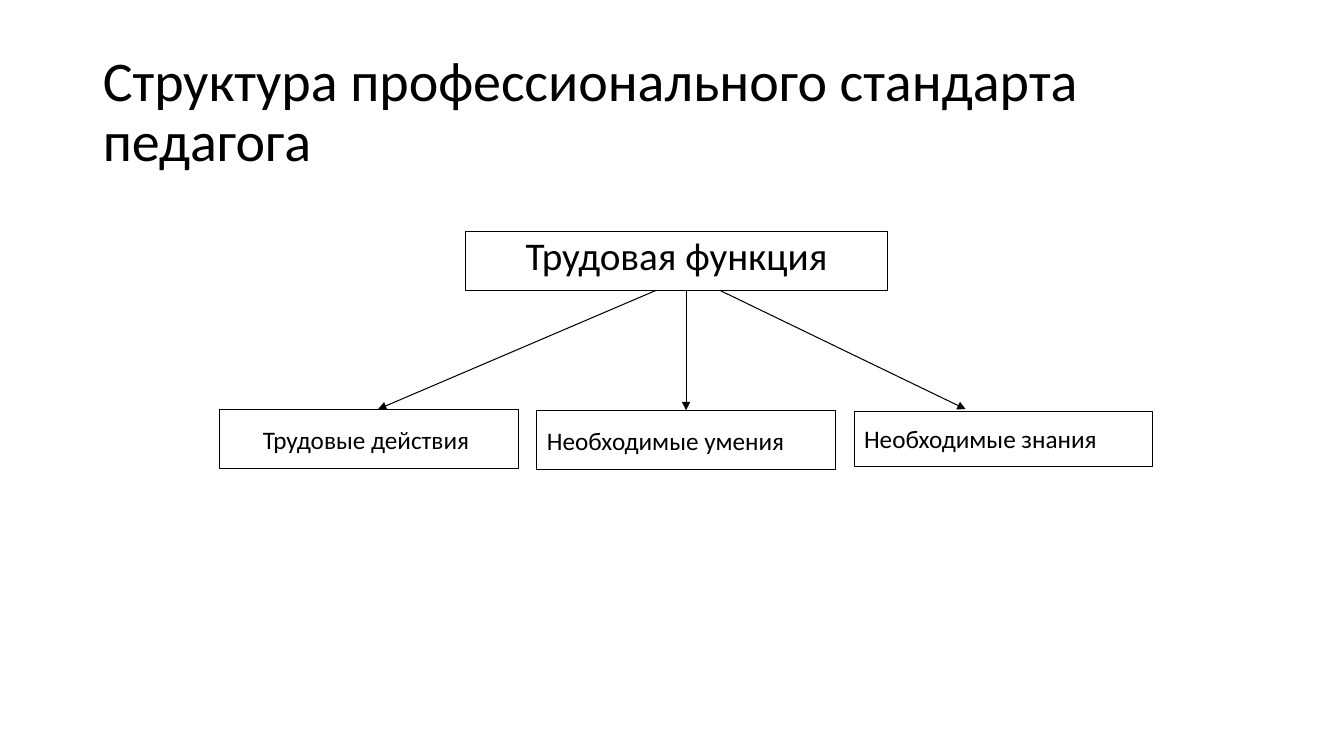
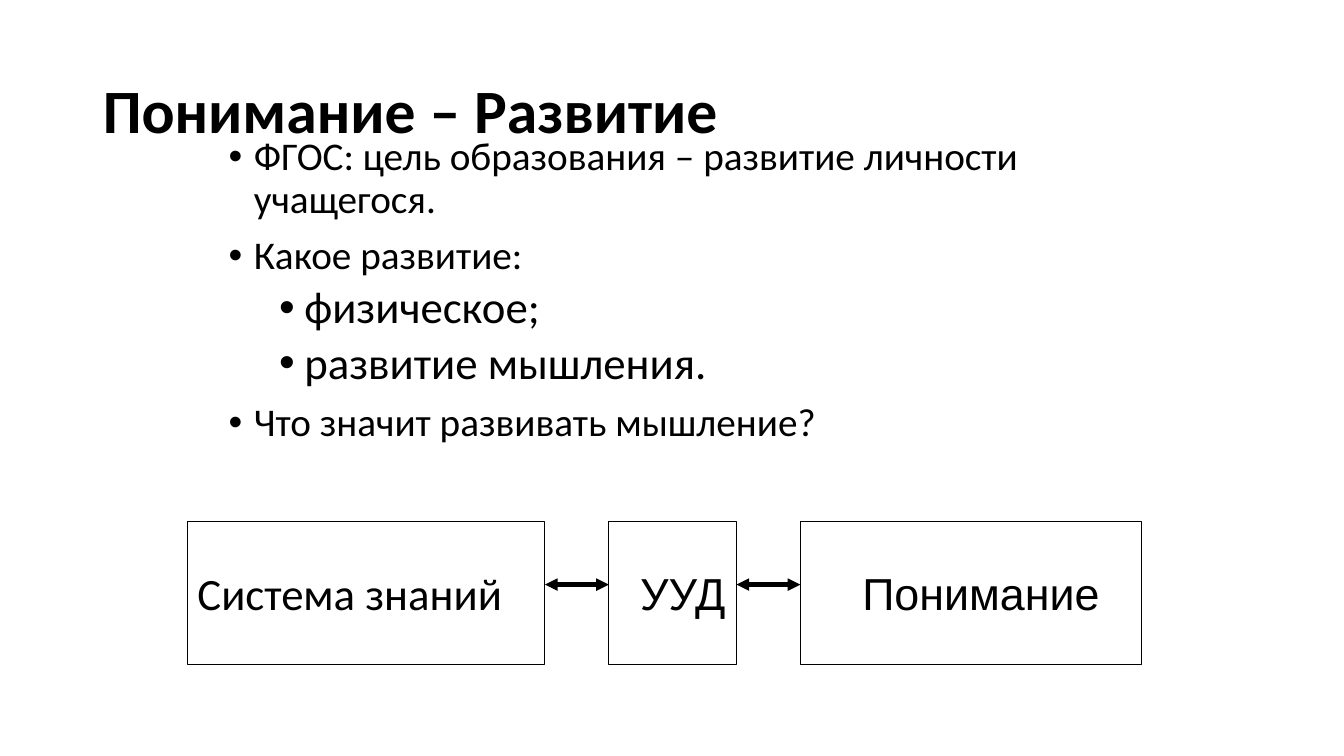
from typing import NamedTuple

import lxml.etree
import pptx
import pptx.dml.color
import pptx.enum.shapes
import pptx.enum.text
import pptx.oxml.ns
import pptx.util

BLACK = pptx.dml.color.RGBColor(0, 0, 0)
WHITE = pptx.dml.color.RGBColor(255, 255, 255)
SANS = "Calibri"
PLAIN = "Arial"
WIDE = pptx.util.Inches(13.33)
HIGH = pptx.util.Inches(7.5)
TIGHT = 0.9

Align = pptx.enum.text.PP_ALIGN
Anchor = pptx.enum.text.MSO_ANCHOR
qn = pptx.oxml.ns.qn


class Area(NamedTuple):
    left: float
    top: float
    width: float
    height: float

    def place(self) -> tuple[int, int, int, int]:
        return (across(self.left), down(self.top),
                across(self.width), down(self.height))


class Part(NamedTuple):
    text: str
    height: float
    align: Align


class Link(NamedTuple):
    text: str
    width: float
    font: str
    align: Align
    indent: float


class Point(NamedTuple):
    text: str
    size: int
    indent: float
    before: int


HEAD = Area(6.9, 5.33, 86.25, 19.33)

ROOT = Area(34.65, 30.67, 31.35, 7.73)
PARTS = [
    Part("Трудовые действия ", 7.87, Align.CENTER),
    Part("Необходимые умения ", 7.87, Align.LEFT),
    Part("Необходимые знания ", 7.33, Align.LEFT),
]
PART_LEFT, PART_TOP, PART_WIDTH = 16.35, 54.13, 22.2
PART_STEP, PART_DROP = 23.6, 0.13
RAYS = [(48.83, 28.13), (51.05, 51.05), (53.55, 71.85)]

LIST = Area(16.28, 17.47, 67.5, 76.67)
POINTS = [
    Point("ФГОС: цель образования – развитие личности учащегося.", 28, 0.25, 10),
    Point("Какое развитие:", 28, 0.25, 10),
    Point("физическое;", 32, 0.75, 5),
    Point("развитие мышления.", 32, 0.75, 5),
    Point("Что значит развивать мышление?", 28, 0.25, 10),
]
LINKS = [
    Link("Система знаний", 26.6, SANS, Align.LEFT, 0),
    Link("УУД", 9.5, PLAIN, Align.CENTER, 0.2),
    Link("Понимание", 25.4, PLAIN, Align.CENTER, 0.2),
]
LINK_LEFT, LINK_TOP, LINK_HEIGHT = 13.95, 68.93, 18.93
LINK_GAP, LINK_LINE = 4.75, 77.33


def across(share: float) -> int:
    return round(WIDE * share / 100)


def down(share: float) -> int:
    return round(HIGH * share / 100)


def write(frame, text: str, *, size: int, font: str = SANS, bold: bool = False,
          align: Align = Align.LEFT, anchor: Anchor = Anchor.MIDDLE,
          lines: float = 1, before: int = 0, indent: float = 0,
          bullet: bool = False) -> None:
    frame.word_wrap = True
    frame.auto_size = pptx.enum.text.MSO_AUTO_SIZE.NONE
    frame.vertical_anchor = anchor
    para = frame.add_paragraph() if frame.text else frame.paragraphs[0]
    para.alignment = align
    para.line_spacing = lines
    para.space_before = pptx.util.Pt(before)
    props = para._p.get_or_add_pPr()
    props.set("marL", str(pptx.util.Inches(indent)))
    if bullet:
        props.set("indent", str(pptx.util.Inches(-0.25)))
        face = lxml.etree.SubElement(props, qn("a:buFont"))
        face.set("typeface", PLAIN)
        mark = lxml.etree.SubElement(props, qn("a:buChar"))
        mark.set("char", "•")
    run = para.add_run()
    run.text = text
    run.font.name = font
    run.font.size = pptx.util.Pt(size)
    run.font.bold = bold
    run.font.color.rgb = BLACK


def start(deck, text: str, *, size: int, bold: bool = False):
    slide = deck.slides.add_slide(deck.slide_layouts[5])
    slide.background.fill.solid()
    slide.background.fill.fore_color.rgb = WHITE
    title = slide.shapes.title
    title.left, title.top, title.width, title.height = HEAD.place()
    write(title.text_frame, text, size=size, bold=bold, lines=TIGHT)
    return slide


def frame_box(slide, area: Area):
    kind = pptx.enum.shapes.MSO_SHAPE.RECTANGLE
    box = slide.shapes.add_shape(kind, *area.place())
    box.shadow.inherit = False
    box.fill.background()
    box.line.color.rgb = BLACK
    box.line.width = pptx.util.Pt(0.75)
    return box


def arrow(slide, begin: tuple[float, float], end: tuple[float, float], *,
          weight: float = 0.75, both: bool = False):
    kind = pptx.enum.shapes.MSO_CONNECTOR.STRAIGHT
    line = slide.shapes.add_connector(
        kind, across(begin[0]), down(begin[1]), across(end[0]), down(end[1]))
    line.line.color.rgb = BLACK
    line.line.width = pptx.util.Pt(weight)
    stroke = line.line._get_or_add_ln()
    for tag in ("a:headEnd", "a:tailEnd") if both else ("a:tailEnd",):
        lxml.etree.SubElement(stroke, qn(tag)).set("type", "triangle")
    lxml.etree.SubElement(line._element.spPr, qn("a:effectLst"))
    return line


def draw_tree(deck) -> None:
    slide = start(deck, "Структура профессионального стандарта педагога", size=40)
    root = frame_box(slide, ROOT)
    write(root.text_frame, "Трудовая функция", size=28, align=Align.CENTER,
          anchor=Anchor.TOP, lines=TIGHT)
    boxes = []
    for i, part in enumerate(PARTS):
        area = Area(PART_LEFT + i * PART_STEP, PART_TOP + i * PART_DROP,
                    PART_WIDTH, part.height)
        box = frame_box(slide, area)
        write(box.text_frame, part.text, size=18, align=part.align)
        boxes.append(box)
    base = ROOT.top + ROOT.height
    rays = [arrow(slide, (x, base), (end, PART_TOP)) for x, end in RAYS]
    rays[1].end_connect(boxes[1], 0)


def draw_chain(deck) -> None:
    slide = start(deck, "Понимание – Развитие", size=44, bold=True)
    body = slide.shapes.add_textbox(*LIST.place())
    for point in POINTS:
        write(body.text_frame, point.text, size=point.size, anchor=Anchor.TOP,
              lines=TIGHT, before=point.before, indent=point.indent, bullet=True)
    left = LINK_LEFT
    for i, link in enumerate(LINKS):
        if i:
            arrow(slide, (left - LINK_GAP, LINK_LINE), (left, LINK_LINE),
                  weight=3, both=True)
        box = frame_box(slide, Area(left, LINK_TOP, link.width, LINK_HEIGHT))
        write(box.text_frame, link.text, size=32, font=link.font,
              align=link.align, indent=link.indent)
        left += link.width + LINK_GAP


def main() -> None:
    deck = pptx.Presentation()
    deck.slide_width, deck.slide_height = WIDE, HIGH
    draw_tree(deck)
    draw_chain(deck)
    deck.save("out.pptx")


if __name__ == "__main__":
    main()
